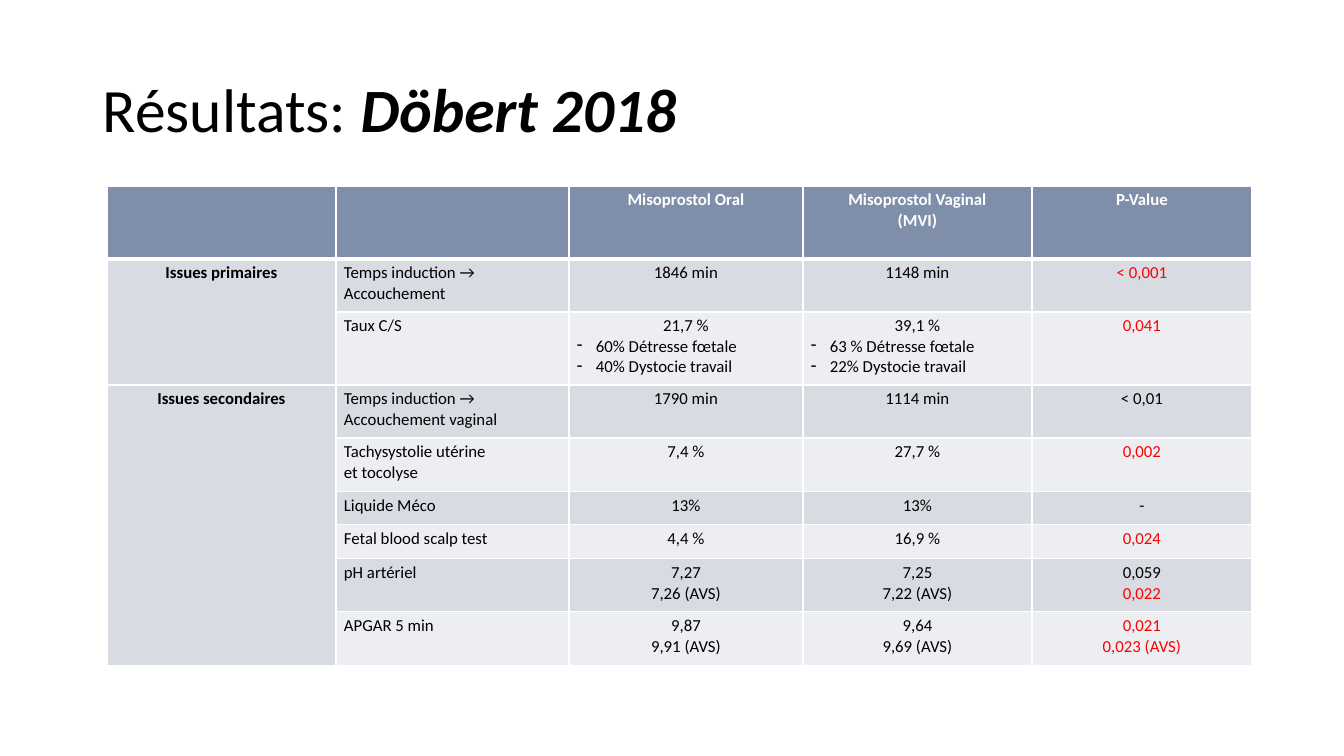
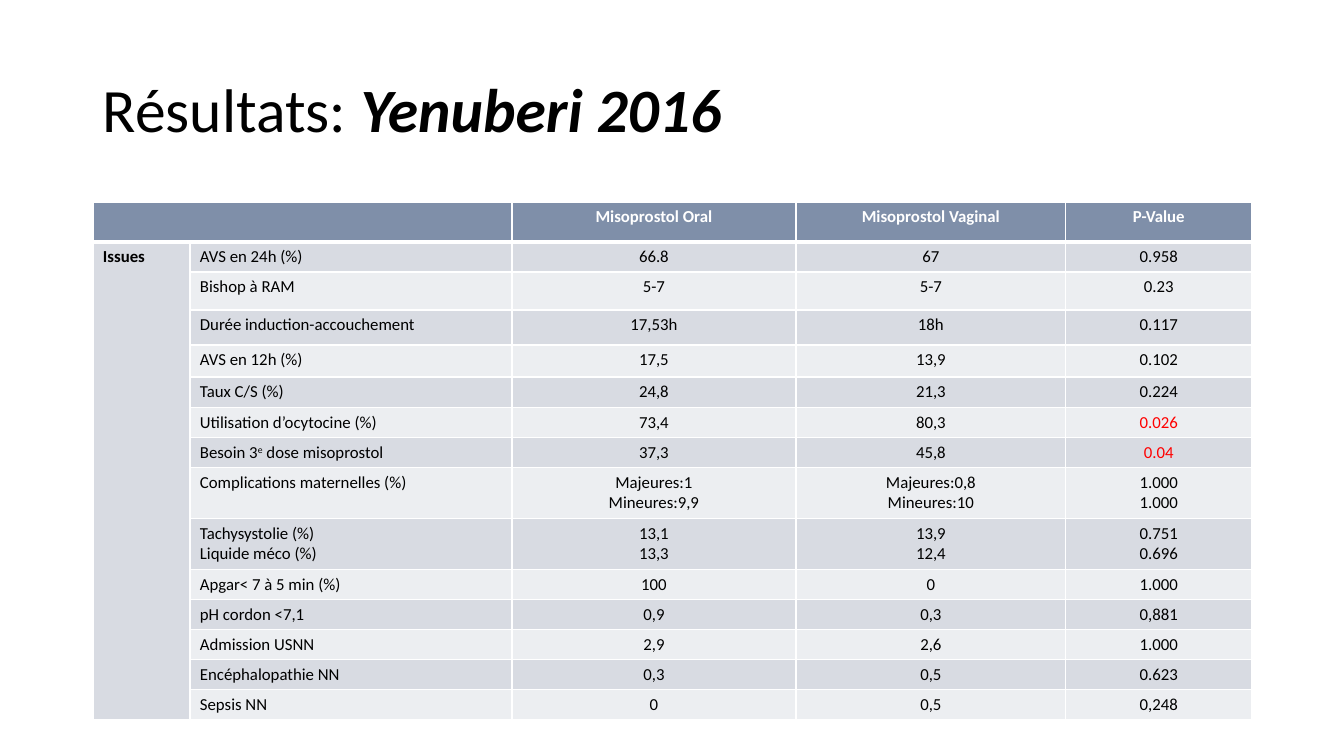
import dataclasses

import lxml.etree
import pptx
import pptx.dml.color
import pptx.enum.text
import pptx.oxml.ns
import pptx.util

ALIGN = pptx.enum.text.PP_ALIGN
EMU_PER_PX = 914400 / 100.8


@dataclasses.dataclass(frozen=True)
class Theme:
    font: str = "Calibri"
    title_size: int = 44
    table_size: int = 12
    text: str = "000000"
    inverse: str = "FFFFFF"
    significant: str = "FF0000"
    header: str = "7F8FA9"
    bands: tuple = ("D8DBE2", "ECEEF1")
    border: str = "FFFFFF"
    thin: int = 1
    thick: int = 3


@dataclasses.dataclass(frozen=True)
class ResultTable:
    left: int
    top: int
    columns: tuple
    rows: tuple
    margins: tuple
    group_align: ALIGN
    header: tuple
    groups: tuple
    merge_corner: bool = False


THEME = Theme()

DOBERT = ResultTable(
    left=107,
    top=186,
    columns=(229, 233, 234, 229, 220),
    rows=(73, 53, 73, 53, 54, 33, 34, 53, 54),
    margins=(8, 4),
    group_align=ALIGN.CENTER,
    header=("", "", "Misoprostol Oral", "Misoprostol Vaginal\n(MVI)", "P-Value"),
    groups=(
        ("Issues primaires", (
            ("Temps induction → Accouchement", "1846 min", "1148 min", "!< 0,001"),
            ("Taux C/S",
             "21,7 %\n- 60% Détresse fœtale\n- 40% Dystocie travail",
             "39,1 %\n- 63 % Détresse fœtale\n- 22% Dystocie travail",
             "!0,041"),
        )),
        ("Issues secondaires", (
            ("Temps induction → Accouchement vaginal", "1790 min", "1114 min", "< 0,01"),
            ("Tachysystolie utérine\net tocolyse", "7,4 %", "27,7 %", "!0,002"),
            ("Liquide Méco", "13%", "13%", "-"),
            ("Fetal blood scalp test", "4,4 %", "16,9 %", "!0,024"),
            ("pH artériel", "7,27\n7,26 (AVS)", "7,25\n7,22 (AVS)", "0,059\n!0,022"),
            ("APGAR 5 min", "9,87\n9,91 (AVS)", "9,64\n9,69 (AVS)", "!0,021\n!0,023 (AVS)"),
        )),
    ),
)

YENUBERI = ResultTable(
    left=93,
    top=202,
    columns=(97, 322, 284, 270, 186),
    rows=(40, 30, 38, 35, 32, 30, 30, 30, 51, 51, 30, 30, 30, 30, 30),
    margins=(10, 5),
    group_align=ALIGN.LEFT,
    header=("", "", "Misoprostol Oral", "Misoprostol Vaginal", "P-Value"),
    groups=(
        ("Issues", (
            ("AVS en 24h (%)", "66.8", "67", "0.958"),
            ("Bishop à RAM", "5-7", "5-7", "0.23"),
            ("Durée induction-accouchement", "17,53h", "18h", "0.117"),
            ("AVS en 12h (%)", "17,5", "13,9", "0.102"),
            ("Taux C/S (%)", "24,8", "21,3", "0.224"),
            ("Utilisation d’ocytocine (%)", "73,4", "80,3", "!0.026"),
            ("Besoin 3^e^ dose misoprostol", "37,3", "45,8", "!0.04"),
            ("Complications maternelles (%)", "Majeures:1\nMineures:9,9",
             "Majeures:0,8\nMineures:10", "1.000\n1.000"),
            ("Tachysystolie (%)\nLiquide méco (%)", "13,1\n13,3", "13,9\n12,4", "0.751\n0.696"),
            ("Apgar< 7 à 5 min (%)", "100", "0", "1.000"),
            ("pH cordon <7,1", "0,9", "0,3", "0,881"),
            ("Admission USNN", "2,9", "2,6", "1.000"),
            ("Encéphalopathie NN", "0,3", "0,5", "0.623"),
            ("Sepsis NN", "0", "0,5", "0,248"),
        )),
    ),
    merge_corner=True,
)


def px(value):
    return pptx.util.Emu(round(value * EMU_PER_PX))


def rgb(color):
    return pptx.dml.color.RGBColor.from_string(color)


def apply_format(target, values):
    for name, value in values.items():
        setattr(target, name, value)


def add_child(parent, tag, **attributes):
    return lxml.etree.SubElement(parent, pptx.oxml.ns.qn(tag), **attributes)


def add_run(paragraph, text, size, color=THEME.text, bold=False, italic=False):
    run = paragraph.add_run()
    run.text = text
    apply_format(run.font, {
        "name": THEME.font, "size": pptx.util.Pt(size), "bold": bold, "italic": italic,
    })
    run.font.color.rgb = rgb(color)
    return run


def add_title(slide, study):
    shape = slide.shapes.add_textbox(px(93), px(40), px(1159), px(146))
    apply_format(shape.text_frame, {
        "word_wrap": True, "vertical_anchor": pptx.enum.text.MSO_ANCHOR.MIDDLE,
    })
    paragraph = shape.text_frame.paragraphs[0]
    paragraph.line_spacing = 0.9
    add_run(paragraph, "Résultats: ", THEME.title_size)
    add_run(paragraph, study, THEME.title_size, bold=True, italic=True)


def set_dash_bullet(paragraph):
    paragraph.alignment = ALIGN.LEFT
    properties = paragraph._p.get_or_add_pPr()
    indent = px(19)
    properties.set("marL", str(indent))
    properties.set("indent", str(-indent))
    add_child(properties, "a:buChar", char="-")


def write_line(paragraph, line, align, color, bold):
    paragraph.alignment = align
    if line.startswith("- "):
        set_dash_bullet(paragraph)
        line = line[2:]
    if line.startswith("!"):
        color, line = THEME.significant, line[1:]
    for index, part in enumerate(line.split("^")):
        if part:
            run = add_run(paragraph, part, THEME.table_size, color, bold)
            if index % 2:
                run.font._element.set("baseline", "30000")
    add_child(paragraph._p, "a:endParaRPr", sz=str(THEME.table_size * 100))


def set_borders(cell, row):
    properties = cell._tc.get_or_add_tcPr()
    top = THEME.thick if row == 1 else THEME.thin
    bottom = THEME.thick if row == 0 else THEME.thin
    for side, width in zip("LRTB", (THEME.thin, THEME.thin, top, bottom)):
        line = add_child(properties, f"a:ln{side}", w=str(pptx.util.Pt(width)))
        add_child(add_child(line, "a:solidFill"), "a:srgbClr", val=THEME.border)


def write_cell(cell, text, row, fill, margins, align, color=THEME.text, bold=False):
    horizontal, vertical = map(px, margins)
    apply_format(cell, {
        "margin_left": horizontal, "margin_right": horizontal,
        "margin_top": vertical, "margin_bottom": vertical,
    })
    set_borders(cell, row)
    cell.fill.solid()
    cell.fill.fore_color.rgb = rgb(fill)
    frame = cell.text_frame
    for index, line in enumerate(text.split("\n")):
        paragraph = frame.add_paragraph() if index else frame.paragraphs[0]
        write_line(paragraph, line, align, color, bold)


def add_result_table(slide, result):
    frame = slide.shapes.add_table(
        len(result.rows), len(result.columns), px(result.left), px(result.top),
        px(sum(result.columns)), px(sum(result.rows)))
    table = frame.table
    apply_format(table, {"first_row": False, "horz_banding": False})
    for column, width in zip(table.columns, result.columns):
        column.width = px(width)
    for row, height in zip(table.rows, result.rows):
        row.height = px(height)

    for column, text in enumerate(result.header):
        write_cell(table.cell(0, column), text, 0, THEME.header, result.margins,
                   ALIGN.CENTER, THEME.inverse, True)
    if result.merge_corner:
        table.cell(0, 0).merge(table.cell(0, 1))

    row = 1
    for label, records in result.groups:
        first = row
        for record in records:
            write_cell(table.cell(row, 0), label if row == first else "", row,
                       THEME.bands[0], result.margins, result.group_align, bold=True)
            for column, text in enumerate(record, start=1):
                align = ALIGN.LEFT if column == 1 else ALIGN.CENTER
                write_cell(table.cell(row, column), text, row,
                           THEME.bands[(row - 1) % 2], result.margins, align)
            row += 1
        table.cell(first, 0).merge(table.cell(row - 1, 0))


def main():
    presentation = pptx.Presentation()
    apply_format(presentation, {"slide_width": px(1344), "slide_height": px(756)})
    for study, result in (("Döbert 2018", DOBERT), ("Yenuberi 2016", YENUBERI)):
        slide = presentation.slides.add_slide(presentation.slide_layouts[6])
        add_title(slide, study)
        add_result_table(slide, result)
    presentation.save("out.pptx")


if __name__ == "__main__":
    main()
